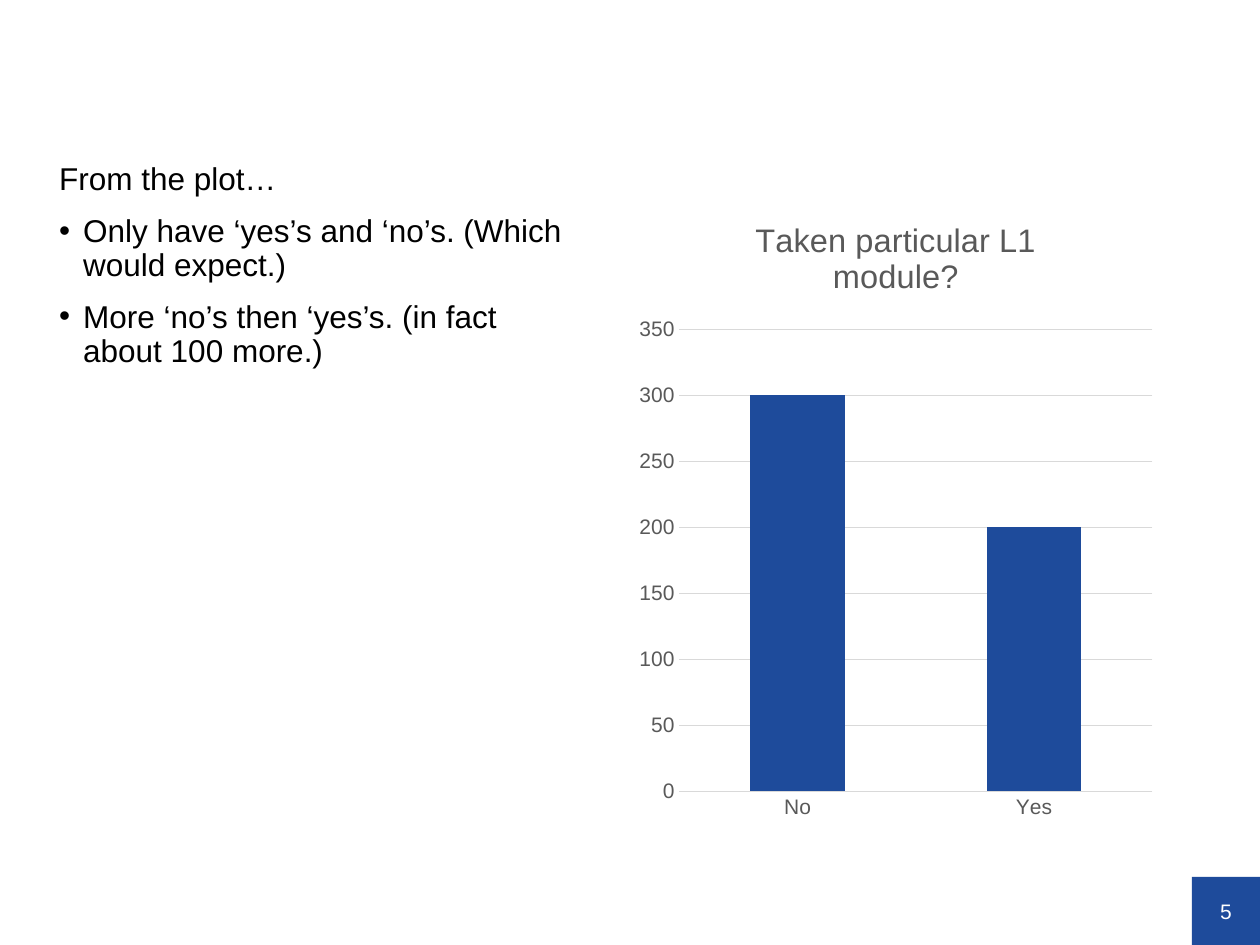
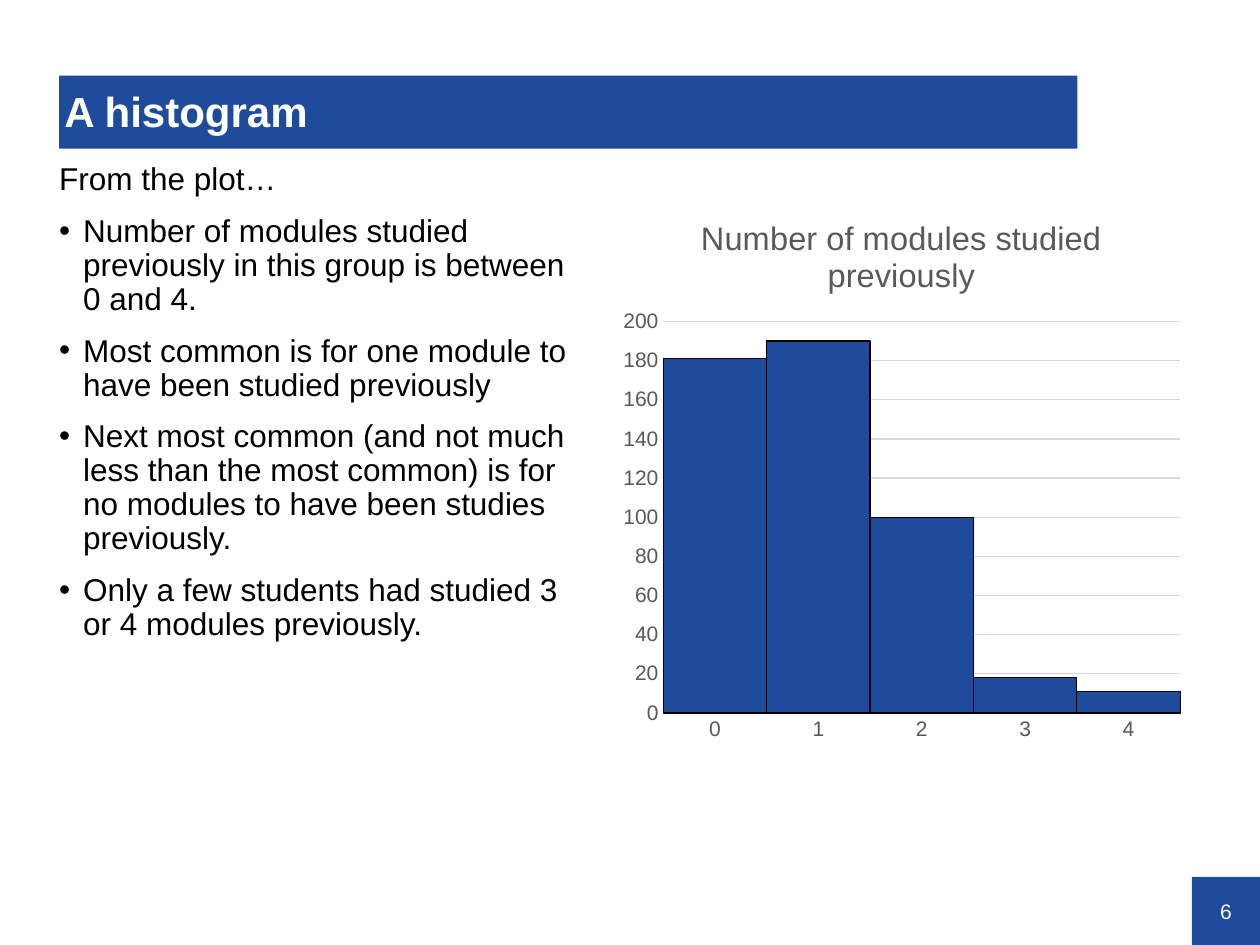
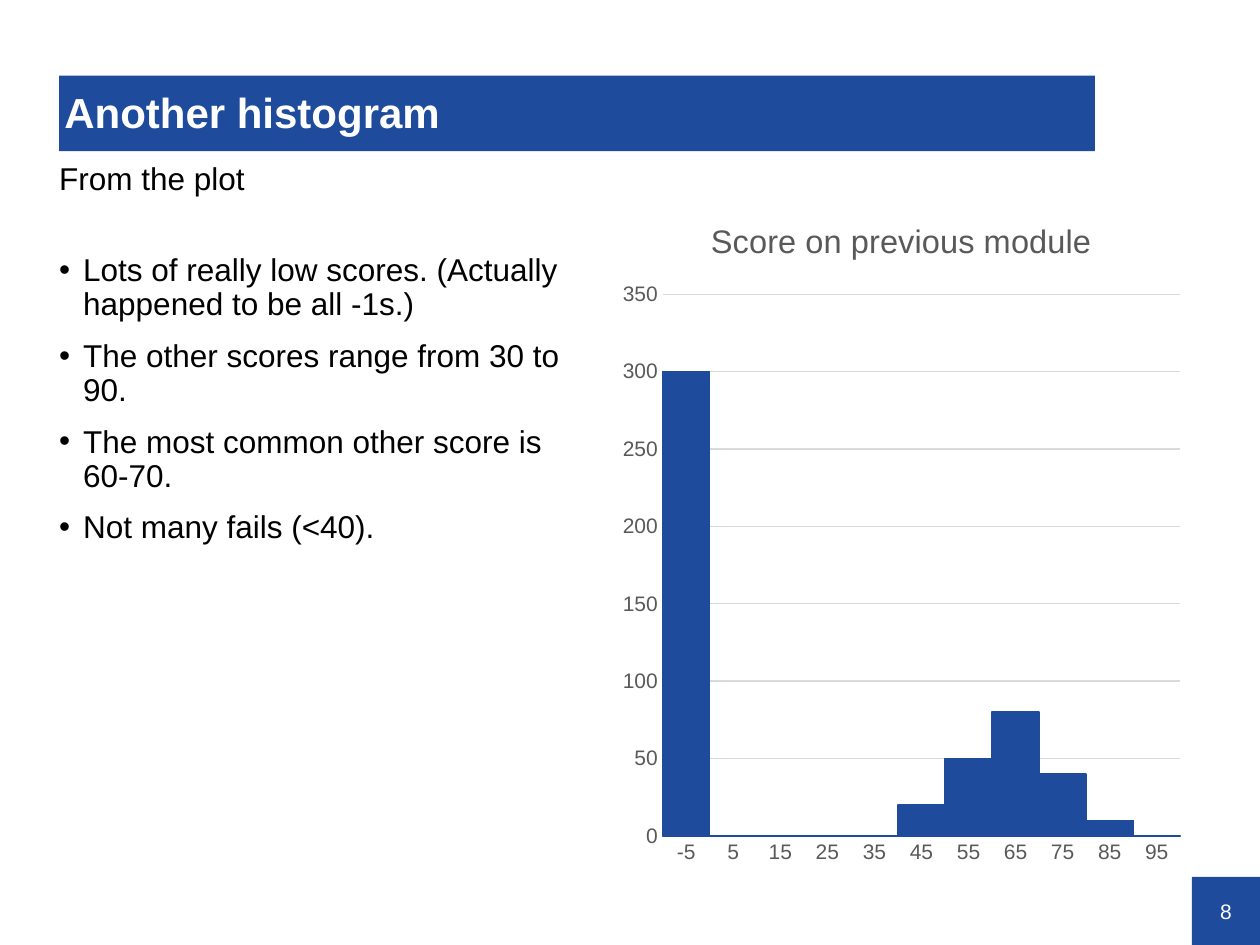
from lxml import etree
from pptx import Presentation
from pptx.chart.data import CategoryChartData as ChartData
from pptx.dml.color import RGBColor
from pptx.enum.chart import XL_CHART_TYPE as ChartType, XL_TICK_MARK as TickMark
from pptx.enum.shapes import MSO_SHAPE as Preset
from pptx.enum.text import MSO_ANCHOR as Anchor, PP_ALIGN as Align
from pptx.oxml.ns import qn
from pptx.util import Inches, Pt

COLORS = {
    "brand": "1E4B9B",
    "white": "FFFFFF",
    "black": "000000",
    "chart_text": "595959",
    "grid": "D9D9D9",
}
FONT = "Arial"
BODY_BOX = (0.43, 1.26, 4.22, 5.7)
NUMBER_BOX = (9.46, 6.96, 0.54, 0.54)
BULLET_INDENT = 0.19

PAGES = [
    dict(
        number=5,
        intro="From the plot…",
        bullets=[
            "Only have ‘yes’s and ‘no’s. (Which would expect.)",
            "More ‘no’s then ‘yes’s. (in fact about 100 more.)",
        ],
        chart=dict(
            box=(4.99, 1.53, 4.24, 5.07),
            title="Taken particular L1 module?",
            bars={"No": 300, "Yes": 200},
            top=350, step=50, gap=150, overlap=100,
            kind=ChartType.COLUMN_STACKED,
        ),
    ),
    dict(
        number=6,
        title="A histogram",
        title_box=(0.47, 0.6, 8.08, 0.58),
        intro="From the plot…",
        bullets=[
            "Number of modules studied previously in this group is between 0 and 4.",
            "Most common is for one module to have been studied previously",
            "Next most common (and not much less than the most common) is for "
            "no modules to have been studies previously.",
            "Only a few students had studied 3 or 4 modules previously.",
        ],
        chart=dict(
            box=(4.85, 1.53, 4.61, 4.44),
            title="Number of modules studied previously",
            series="Series 1",
            bars=dict(zip("01234", (181, 190, 100, 18, 11))),
            top=200, step=20, outline="black",
            plot_area=dict(x=0.09, y=0.23, w=0.89, h=0.7),
        ),
    ),
    dict(
        number=8,
        title="Another histogram",
        title_box=(0.47, 0.6, 8.22, 0.6),
        intro="From the plot",
        intro_gap=32.5,
        bullets=[
            "Lots of really low scores. (Actually happened to be all -1s.)",
            "The other scores range from 30 to 90.",
            "The most common other score is 60-70.",
            "Not many fails (<40).",
        ],
        chart=dict(
            box=(4.85, 1.53, 4.61, 5.43),
            title="Score on previous module",
            bars=dict(zip(map(str, range(-5, 96, 10)),
                          (300, 0, 0, 0, 0, 20, 50, 80, 40, 10, 0))),
            top=350, step=50, outline="brand",
        ),
    ),
]


def rgb(name):
    return RGBColor.from_string(COLORS[name])


def style_font(font, size, color, bold=False):
    font.name, font.size, font.bold = FONT, Pt(size), bold
    font.color.rgb = rgb(color)


def style_line(line, color, width=0.75):
    line.color.rgb = rgb(color)
    line.width = Pt(width)


def set_frame(frame, margins, anchor=Anchor.MIDDLE):
    """Wrap the text; margins are left, top, right and bottom."""
    frame.word_wrap = True
    frame.vertical_anchor = anchor
    (frame.margin_left, frame.margin_top,
     frame.margin_right, frame.margin_bottom) = map(Inches, margins)


def add_bullet(para):
    props = para._p.get_or_add_pPr()
    props.set("marL", str(Inches(BULLET_INDENT)))
    props.set("indent", str(-Inches(BULLET_INDENT)))
    etree.SubElement(props, qn("a:buFont")).set("typeface", FONT)
    etree.SubElement(props, qn("a:buChar")).set("char", "•")


def write(para, text, size=18, color="black", bold=False, align=Align.LEFT,
          spacing=None, before=0, bullet=False):
    if bullet:
        add_bullet(para)
    para.alignment = align
    para.line_spacing = spacing
    para.space_before = Pt(before)
    span = para.add_run()
    span.text = text
    style_font(span.font, size, color, bold)


def add_band(page, box, text, margins=(0, 0, 0, 0), **text_format):
    band = page.shapes.add_shape(Preset.RECTANGLE, *map(Inches, box))
    band.shadow.inherit = False
    band.fill.solid()
    band.fill.fore_color.rgb = rgb("brand")
    band.line.fill.background()
    set_frame(band.text_frame, margins)
    write(band.text_frame.paragraphs[0], text, color="white", **text_format)


def add_body(page, box, intro, bullets, intro_gap=10):
    frame = page.shapes.add_textbox(*map(Inches, box)).text_frame
    set_frame(frame, [0.04] * 4, Anchor.TOP)
    write(frame.paragraphs[0], intro, spacing=0.9)
    for index, text in enumerate(bullets):
        write(frame.add_paragraph(), text, spacing=0.9, bullet=True,
              before=10 if index else intro_gap)


def style_axes(chart, top, step):
    for axis in (chart.category_axis, chart.value_axis):
        axis.major_tick_mark = axis.minor_tick_mark = TickMark.NONE
        style_font(axis.tick_labels.font, 12, "chart_text")
    style_line(chart.category_axis.format.line, "grid")
    values = chart.value_axis
    values.minimum_scale, values.maximum_scale = 0, top
    values.major_unit = step
    values.format.line.fill.background()
    values.has_major_gridlines = True
    style_line(values.major_gridlines.format.line, "grid")


def place_plot(chart, area):
    """Fix the inner plot area, in fractions of the chart."""
    plot_area = chart._chartSpace.chart.plotArea
    for old_layout in plot_area.findall(qn("c:layout")):
        plot_area.remove(old_layout)
    layout = etree.Element(qn("c:layout"))
    plot_area.insert(0, layout)
    manual = etree.SubElement(layout, qn("c:manualLayout"))
    settings = {"layoutTarget": "inner", "xMode": "edge", "yMode": "edge", **area}
    for name, value in settings.items():
        etree.SubElement(manual, qn(f"c:{name}")).set("val", str(value))


def add_columns(page, box, title, bars, top, step, series=None, gap=0,
                overlap=-27, outline=None, plot_area=None,
                kind=ChartType.COLUMN_CLUSTERED):
    data = ChartData()
    data.categories = list(bars)
    data.add_series(series or title, list(bars.values()))
    chart = page.shapes.add_chart(kind, *map(Inches, box), data).chart
    style_font(chart.font, 10, "black")
    chart.has_legend = False
    chart.has_title = True
    chart.chart_title.include_in_layout = False
    write(chart.chart_title.text_frame.paragraphs[0], title, size=18.6,
          color="chart_text", align=Align.CENTER)
    style_axes(chart, top, step)
    if plot_area:
        place_plot(chart, plot_area)

    plot = chart.plots[0]
    plot.vary_by_categories = False
    plot.gap_width, plot.overlap = gap, overlap
    columns = plot.series[0]
    columns.invert_if_negative = False
    columns.format.fill.solid()
    columns.format.fill.fore_color.rgb = rgb("brand")
    if outline:
        style_line(columns.format.line, outline)


def add_page(deck, number, intro, bullets, chart, title=None, title_box=None,
             intro_gap=10):
    page = deck.slides.add_slide(deck.slide_layouts[6])
    add_band(page, NUMBER_BOX, str(number), size=12, align=Align.CENTER)
    add_body(page, BODY_BOX, intro, bullets, intro_gap)
    if title:
        add_band(page, title_box, title, margins=(0.04, 0.02, 0, 0),
                 size=24, bold=True, spacing=0.9)
    add_columns(page, **chart)


def main():
    deck = Presentation()
    deck.slide_width, deck.slide_height = Inches(10), Inches(7.5)
    for content in PAGES:
        add_page(deck, **content)
    deck.save("out.pptx")


if __name__ == "__main__":
    main()
